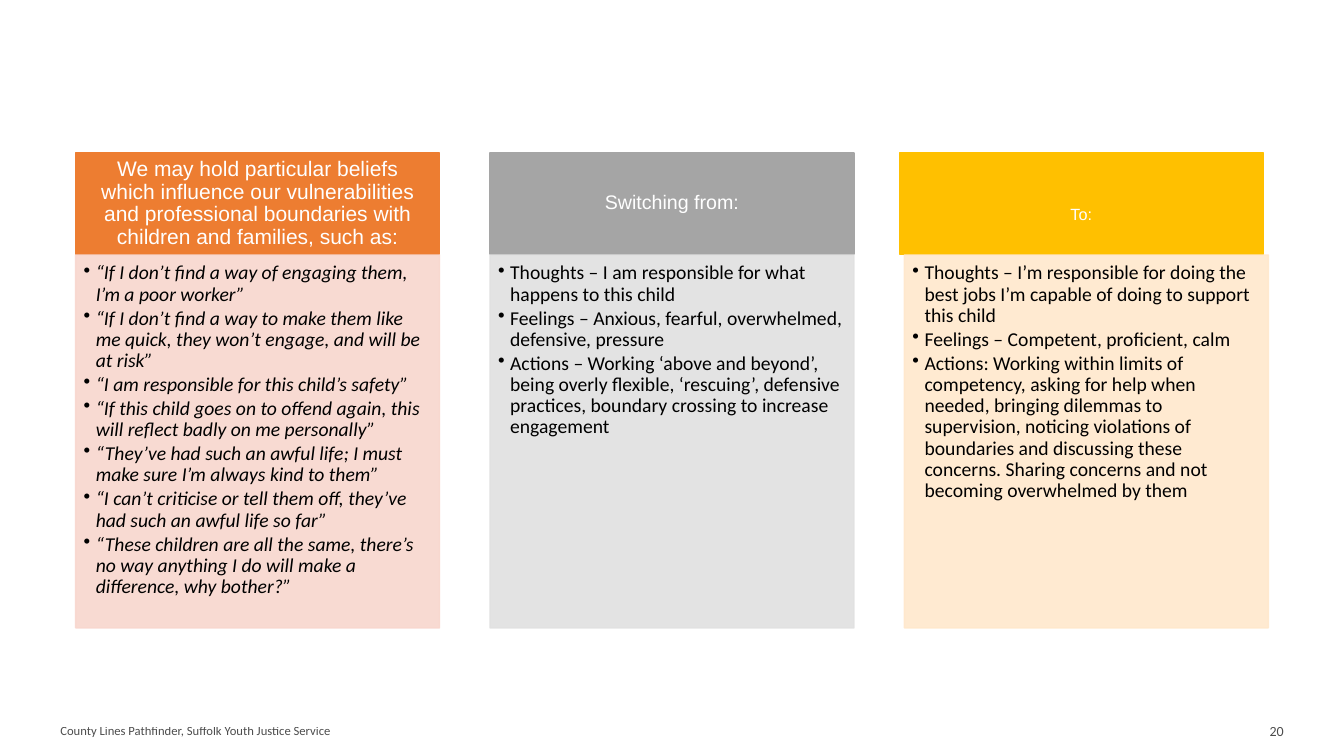
"""Builds the beliefs and boundaries slide with three headed columns."""
from pptx import Presentation
from pptx.dml.color import RGBColor
from pptx.enum.shapes import MSO_SHAPE
from pptx.enum.text import MSO_ANCHOR as ANCHOR, PP_ALIGN as ALIGN
from pptx.oxml.ns import qn
from pptx.oxml.xmlchemy import OxmlElement as Element
from pptx.util import Inches, Pt

COLORS = {
    "orange": "ED7D31", "orange_tint": "F8D7CE",
    "gray": "A5A5A5", "gray_tint": "E1E1E1",
    "gold": "FFC000", "gold_tint": "FFE8CC",
    "white": "FFFFFF", "black": "000000",
}
COLUMNS = [
    {
        "color": "orange", "head_x": 0.75, "body_x": 0.75, "size": 15, "inset": (0.12, 0.07),
        "title": "We may hold particular beliefs which influence our vulnerabilities "
                 "and professional boundaries with children and families, such as:",
        "italic": True,
        "bullets": [
            "“If I don’t find a way of engaging them, I’m a poor worker”",
            "“If I don’t find a way to make them like me quick, they won’t engage, and will be at risk”",
            "“I am responsible for this child’s safety”",
            "“If this child goes on to offend again, this will reflect badly on me personally”",
            "“They’ve had such an awful life; I must make sure I’m always kind to them”",
            "“I can’t criticise or tell them off, they’ve had such an awful life so far”",
            "“These children are all the same, there’s no way anything I do will make a difference, why bother?”",
        ],
    },
    {
        "color": "gray", "head_x": 4.86, "body_x": 4.86, "size": 14, "inset": (0.11, 0.06),
        "title": "Switching from:",
        "bullets": [
            "Thoughts – I am responsible for what happens to this child",
            "Feelings – Anxious, fearful, overwhelmed, defensive, pressure",
            "Actions – Working ‘above and beyond’, being overly flexible, ‘rescuing’, defensive "
            "practices, boundary crossing to increase engagement",
        ],
    },
    {
        "color": "gold", "head_x": 8.92, "body_x": 8.97, "size": 20, "inset": (0.16, 0.09),
        "title": "To:", "baseline": -25,
        "bullets": [
            "Thoughts – I’m responsible for doing the best jobs I’m capable of doing to support this child",
            "Feelings – Competent, proficient, calm",
            "Actions: Working within limits of competency, asking for help when needed, bringing "
            "dilemmas to supervision, noticing violations of boundaries and discussing these "
            "concerns. Sharing concerns and not becoming overwhelmed by them",
        ],
    },
]


class SlideBuilder:
    head_font, body_font = "Arial", "Calibri"
    width, head_y, head_h, body_y, body_h = 3.61, 1.52, 1, 2.53, 3.7

    def __init__(self, slide):
        self.slide = slide

    def rgb(self, name):
        return RGBColor.from_string(COLORS[name])

    def fade(self, element, percent):
        for clr in element.iter(qn("a:srgbClr")):
            alpha = Element("a:alpha")
            alpha.set("val", str(percent * 1000))
            clr.append(alpha)

    def frame(self, sp, insets, anchor):
        tf = sp.text_frame
        tf.word_wrap = True
        tf.vertical_anchor = anchor
        tf.margin_left, tf.margin_top, tf.margin_right, tf.margin_bottom = map(Inches, insets)
        return tf

    def set_text(self, p, text, font, size, color, align=ALIGN.LEFT, italic=False):
        p.text = text
        p.alignment = align
        r = p.runs[0]
        r.font.name = font
        r.font.size = Pt(size)
        r.font.italic = italic
        r.font.color.rgb = self.rgb(color)
        return r

    def box(self, x, y, h, color):
        sp = self.slide.shapes.add_shape(
            MSO_SHAPE.RECTANGLE, Inches(x), Inches(y), Inches(self.width), Inches(h))
        sp.shadow.inherit = False
        sp.fill.solid()
        sp.fill.fore_color.rgb = self.rgb(color)
        sp.line.color.rgb = self.rgb(color)
        sp.line.width = Pt(1)
        return sp

    def heading(self, x, color, title, size, inset, baseline=0):
        sp = self.box(x, self.head_y, self.head_h, color)
        p = self.frame(sp, inset * 2, ANCHOR.MIDDLE).paragraphs[0]
        p.line_spacing = 0.9
        r = self.set_text(p, title, self.head_font, size, "white", ALIGN.CENTER)
        if baseline:
            r._r.get_or_add_rPr().set("baseline", str(baseline * 1000))

    def bullet_list(self, x, color, bullets, italic):
        sp = self.box(x, self.body_y, self.body_h, color)
        self.fade(sp._element.spPr, 90)
        tf = self.frame(sp, (0.08, 0.08, 0.11, 0.12), ANCHOR.TOP)
        for i, text in enumerate(bullets):
            p = tf.add_paragraph() if i else tf.paragraphs[0]
            self.set_text(p, text, self.body_font, 14, "black", italic=italic)
            p.line_spacing = 0.9
            p.space_after = Pt(2)
            pPr = p._p.get_or_add_pPr()
            pPr.set("marL", str(Inches(0.12)))
            pPr.set("indent", str(Inches(-0.12)))
            bullet = Element("a:buChar")
            bullet.set("char", "•")
            pPr.append(bullet)

    def column(self, col):
        self.heading(col["head_x"], col["color"], col["title"], col["size"],
                     col["inset"], col.get("baseline", 0))
        self.bullet_list(col["body_x"], col["color"] + "_tint", col["bullets"],
                         col.get("italic", False))

    def footer(self, x, width, text, size, align=ALIGN.LEFT):
        sp = self.slide.shapes.add_textbox(Inches(x), Inches(7), Inches(width), Inches(0.5))
        p = self.frame(sp, (0.1, 0.05, 0.1, 0.05), ANCHOR.MIDDLE).paragraphs[0]
        self.set_text(p, text, self.body_font, size, "black", align)
        self.fade(p._p, 70)


def main():
    prs = Presentation()
    prs.slide_width, prs.slide_height = Inches(13.33), Inches(7.5)
    s = SlideBuilder(prs.slides.add_slide(prs.slide_layouts[6]))
    s.footer(0.5, 7.67, "County Lines Pathfinder, Suffolk Youth Justice Service", 9)
    s.footer(12.08, 0.75, "20", 10, ALIGN.RIGHT)
    for col in COLUMNS:
        s.column(col)
    prs.save("out.pptx")


if __name__ == "__main__":
    main()
